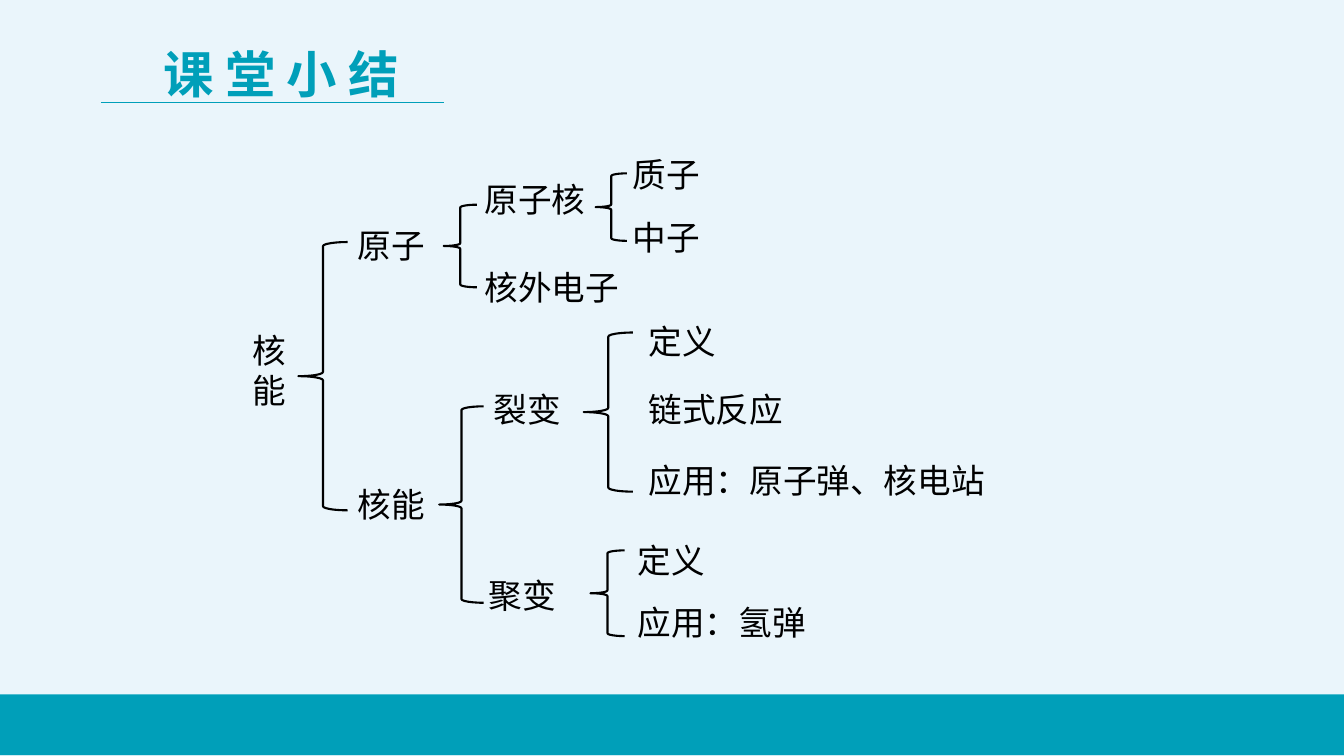
"""Build the lesson summary slide: a brace tree about nuclear energy."""
from lxml import etree
from pptx import Presentation
from pptx.dml.color import RGBColor
from pptx.enum.shapes import MSO_CONNECTOR, MSO_SHAPE
from pptx.enum.text import MSO_ANCHOR, PP_ALIGN
from pptx.oxml.ns import qn
from pptx.util import Cm, Pt

TEAL = RGBColor(0x00, 0x9F, 0xB9)
PALE = RGBColor(0xEA, 0xF5, 0xFB)
BLACK = RGBColor(0x00, 0x00, 0x00)
CJK = "Noto Sans CJK SC"
BRACE, RECT = MSO_SHAPE.LEFT_BRACE, MSO_SHAPE.RECTANGLE
STRAIGHT = MSO_CONNECTOR.STRAIGHT
TOP, LEFT = MSO_ANCHOR.TOP, PP_ALIGN.LEFT


def write(sp, text, size, color, latin, bold=False, wrap=True):
    tf = sp.text_frame
    tf.word_wrap = wrap
    tf.vertical_anchor = TOP
    p = tf.paragraphs[0]
    r = p.add_run()
    r.text = text
    p.alignment = LEFT
    p.font.size = Pt(size)
    p.font.bold = bold
    p.font.color.rgb = color
    p.font.name = latin
    ea = etree.SubElement(r.font._element, qn("a:ea"))
    ea.set("typeface", CJK)


prs = Presentation()
prs.slide_width, prs.slide_height = Cm(33.87), Cm(19.05)
s = prs.slides.add_slide(prs.slide_layouts[5])
s.background.fill.solid()
s.background.fill.fore_color.rgb = PALE

bar = s.shapes.add_shape(RECT, 0, Cm(17.5), prs.slide_width, Cm(1.53))
bar.shadow.inherit = False
bar.fill.solid()
bar.fill.fore_color.rgb = TEAL
bar.line.fill.background()

title = s.shapes.title
title.left, title.top, title.width, title.height = Cm(3.86), Cm(0.97), Cm(6.71), Cm(1.8)
write(title, "课 堂 小 结", 36, TEAL, "Arial", bold=True, wrap=False)

rule = s.shapes.add_connector(STRAIGHT, Cm(2.54), Cm(2.59), Cm(11.2), Cm(2.59))
rule.line.color.rgb = TEAL
rule.line.width = Pt(0.5)
etree.SubElement(rule._element.spPr, qn("a:effectLst"))

labels = [
    ("核能", 6.12, 8.18, 1.73, 2.31),
    ("原子", 8.76, 5.54, 3.4, 1.27),
    ("核能", 8.76, 12.07, 3.4, 1.27),
    ("原子核", 11.96, 4.39, 3.4, 1.27),
    ("核外电子", 11.96, 6.6, 3.99, 1.27),
    ("质子", 15.7, 3.76, 3.4, 1.27),
    ("中子", 15.7, 5.33, 3.4, 1.27),
    ("裂变", 12.19, 9.68, 3.99, 1.27),
    ("聚变", 12.07, 14.35, 3.99, 1.27),
    ("定义", 16.1, 7.95, 10.95, 1.27),
    ("链式反应", 16.1, 9.68, 3.99, 1.27),
    ("应用：原子弹、核电站", 16.1, 11.46, 9.35, 1.27),
    ("定义", 15.82, 13.49, 10.95, 1.27),
    ("应用：氢弹", 15.82, 15.04, 10.95, 1.27),
]
for text, *box in labels:
    write(s.shapes.add_textbox(*map(Cm, box)), text, 24, BLACK, CJK)

braces = [
    (7.52, 6.1, 1.24, 6.76),
    (11.18, 5.16, 0.84, 2.08),
    (11.07, 10.24, 1.12, 4.95),
    (15.01, 4.37, 0.79, 1.7),
    (14.71, 8.38, 1.24, 4.01),
    (14.88, 13.87, 0.86, 2.16),
]
for box in braces:
    sp = s.shapes.add_shape(BRACE, *map(Cm, box))
    sp.shadow.inherit = False
    sp.fill.background()
    sp.line.color.rgb = BLACK
    sp.line.width = Pt(1.5)

prs.save("out.pptx")
